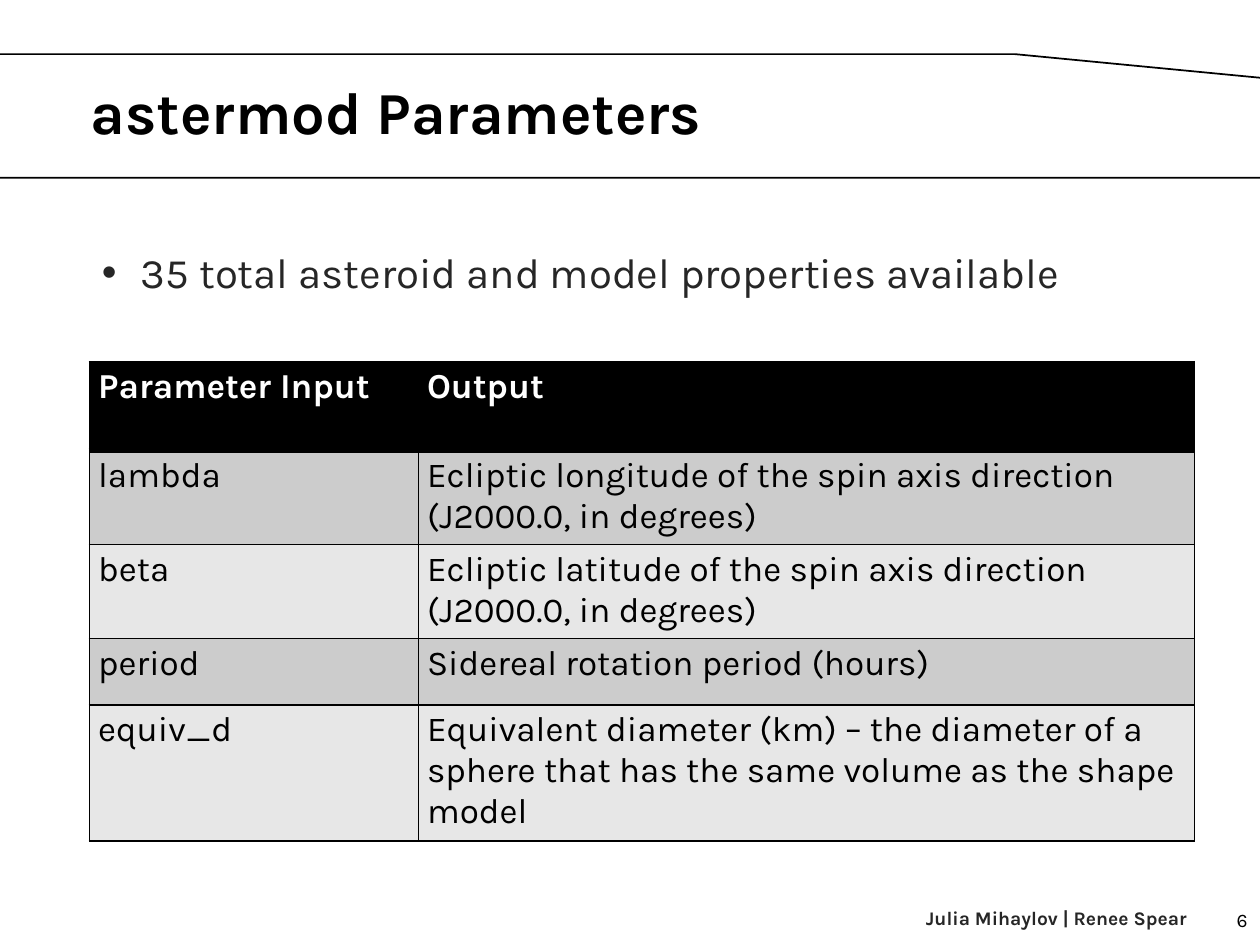
from lxml import etree
from pptx import Presentation
from pptx.dml.color import RGBColor
from pptx.enum.shapes import MSO_SHAPE
from pptx.enum.text import MSO_ANCHOR, PP_ALIGN
from pptx.oxml import parse_xml
from pptx.oxml.ns import nsdecls, qn
from pptx.util import Inches, Pt

WIDTH, HEIGHT = Inches(10), Inches(7.5)
BLACK = RGBColor(0x00, 0x00, 0x00)
WHITE = RGBColor(0xFF, 0xFF, 0xFF)
CHARCOAL = RGBColor(0x26, 0x26, 0x26)
BANDS = [RGBColor(0xE7, 0xE7, 0xE7), RGBColor(0xCC, 0xCC, 0xCC)]
LEFT, RIGHT = PP_ALIGN.LEFT, PP_ALIGN.RIGHT
TOP, MIDDLE = MSO_ANCHOR.TOP, MSO_ANCHOR.MIDDLE
CARD = MSO_SHAPE.FLOWCHART_CARD


def area(left, top, width, height):
    return [int(size * percent / 100) for size, percent in
            ((WIDTH, left), (HEIGHT, top), (WIDTH, width), (HEIGHT, height))]


def write(frame, text, size, color, bold=False, align=LEFT, spacing=1.0):
    frame.word_wrap = True
    paragraph = frame.paragraphs[0]
    paragraph.alignment = align
    paragraph.line_spacing = spacing
    run = paragraph.add_run()
    run.text = text
    values = {"name": "Karla", "size": Pt(size), "bold": bold}
    for name, value in values.items():
        setattr(run.font, name, value)
    run.font.color.rgb = color
    return paragraph


presentation = Presentation()
presentation.slide_width, presentation.slide_height = WIDTH, HEIGHT
slide = presentation.slides.add_slide(presentation.slide_layouts[5])
shapes = slide.shapes

card = shapes.add_shape(CARD, *area(-0.9, 5.73, 101.8, 13.07))
card.shadow.inherit = False
card.fill.solid()
card.fill.fore_color.rgb = WHITE
card.line.color.rgb = BLACK
card.line.width = Pt(1)
card._element.spPr.find(qn("a:xfrm")).set("flipH", "1")

title = shapes.title
card._element.addnext(title._element)
title.left, title.top, title.width, title.height = area(6.2, 8.13, 89.3, 13.07)
title.text_frame.vertical_anchor = TOP
write(title.text_frame, "astermod Parameters", 34, BLACK, bold=True, spacing=0.9)

body = shapes.add_textbox(*area(7.1, 24.8, 87.7, 11.47))
bullet = write(body.text_frame, "35 total asteroid and model properties available",
               24, CHARCOAL, spacing=1.12)
bullet.space_before = Pt(9)
properties = bullet._p.get_or_add_pPr()
properties.set("marL", str(Inches(0.31)))
properties.set("indent", str(-Inches(0.31)))
etree.SubElement(properties, qn("a:buFont")).set("typeface", "Arial")
etree.SubElement(properties, qn("a:buChar")).set("char", "•")

authors = shapes.add_textbox(*area(63.9, 95.2, 31.3, 5.33))
write(authors.text_frame, "Julia Mihaylov | Renee Spear", 11, CHARCOAL, bold=True, align=RIGHT)

page_number = shapes.add_textbox(*area(95.5, 94.67, 4.5, 5.33))
page_number.text_frame.vertical_anchor = MIDDLE
write(page_number.text_frame, "6", 11, BLACK, align=RIGHT)

parameters = [
    ("Parameter Input", "Output"),
    ("lambda", "Ecliptic longitude of the spin axis direction (J2000.0, in degrees)"),
    ("beta", "Ecliptic latitude of the spin axis direction (J2000.0, in degrees)"),
    ("period", "Sidereal rotation period (hours)"),
    ("equiv_d", "Equivalent diameter (km) – the diameter of a sphere "
                "that has the same volume as the shape model"),
]
table = shapes.add_table(len(parameters), 2, *area(7.1, 38.27, 87.7, 37.33)).table
for column, percent in zip(table.columns, (26.1, 61.6)):
    column.width = int(WIDTH * percent / 100)
for row, percent in zip(table.rows, (9.4, 6.8, 7, 7, 7)):
    row.height = int(HEIGHT * percent / 100)

margins = {"margin_left": 0.07, "margin_right": 0.07, "margin_top": 0.04, "margin_bottom": 0.04}
for row_index, texts in enumerate(parameters):
    header = row_index == 0
    for column_index, text in enumerate(texts):
        cell = table.cell(row_index, column_index)
        for name, inches in margins.items():
            setattr(cell, name, Inches(inches))
        cell.fill.solid()
        cell.fill.fore_color.rgb = BLACK if header else BANDS[row_index % 2]
        write(cell.text_frame, text, 20, WHITE if header else BLACK, bold=header)
        cell_properties = cell._tc.get_or_add_tcPr()
        for position, side in enumerate("LRTB"):
            thick = (header and side == "B") or (row_index == 1 and side == "T")
            cell_properties.insert(position, parse_xml(
                f'<a:ln{side} {nsdecls("a")} w="{Pt(3 if thick else 1)}">'
                f'<a:solidFill><a:srgbClr val="{BLACK}"/></a:solidFill></a:ln{side}>'))

presentation.save("out.pptx")
